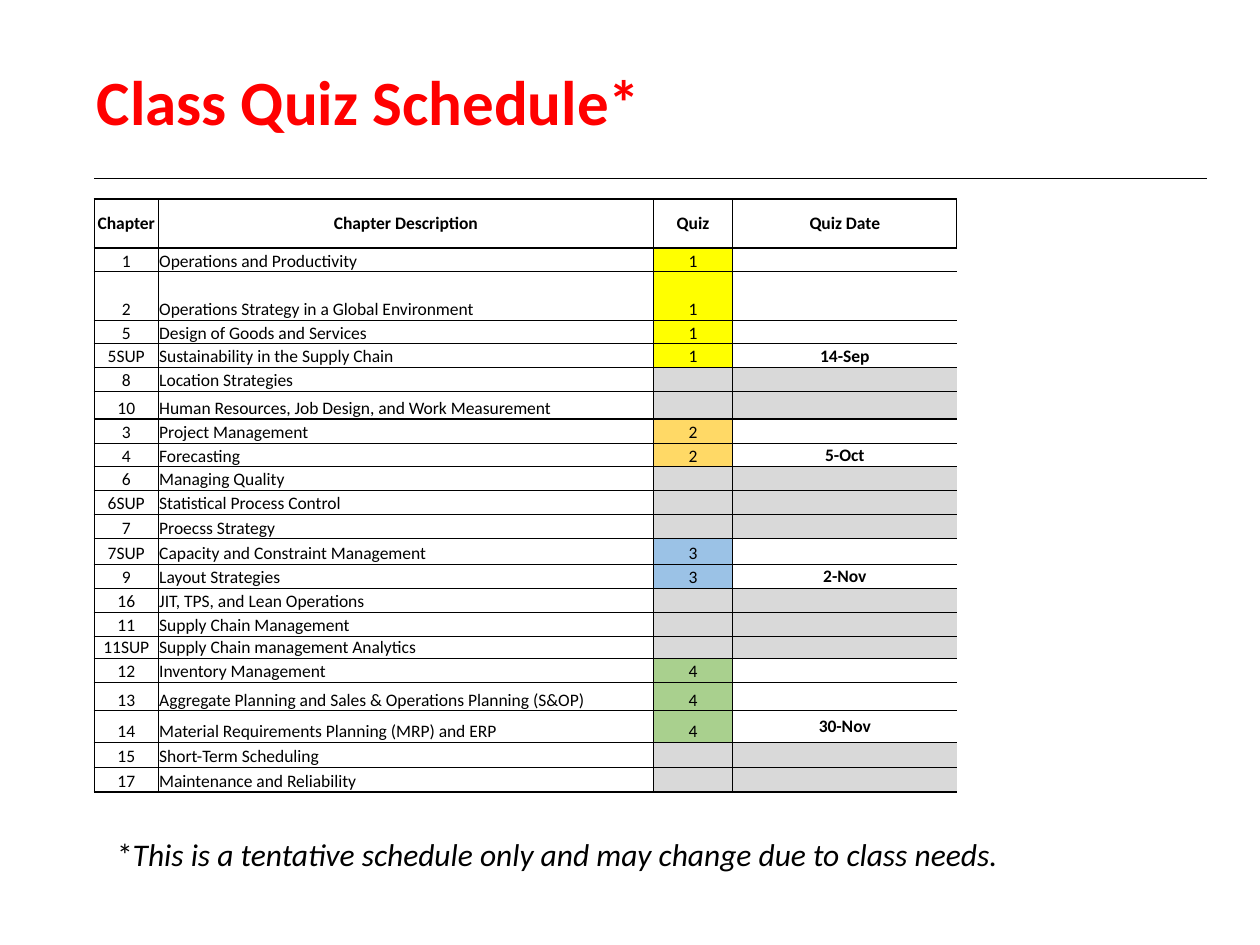
from lxml.etree import SubElement
from pptx import Presentation
from pptx.dml.color import RGBColor
from pptx.enum.shapes import MSO_CONNECTOR
from pptx.enum.text import MSO_ANCHOR as Anchor, PP_ALIGN as Align
from pptx.oxml.ns import qn
from pptx.util import Cm, Pt

FONT = "Calibri"
COLORS = {
    "title": "FF0000", "ink": "000000", "unused": "D9D9D9",
    "1": "FFFF00", "2": "FFD966", "3": "9BC2E6", "4": "A9D08E",
}
TITLE = "Class Quiz Schedule*"
NOTE = [("*", False),
        ("This is a tentative schedule only and may change due to class needs.", True)]
HEADER = ("Chapter", "Chapter Description", "Quiz", "Quiz Date")
ROW_HEIGHT = 0.48
HEADER_HEIGHT = 0.99
SPECIAL_HEIGHTS = {"2": 0.97, "10": 0.56, "7": 0.49, "7SUP": 0.52, "11SUP": 0.45,
                   "13": 0.58, "14": 0.63, "15": 0.5, "17": 0.51}
COLUMN_WIDTHS = (1.29, 9.98, 1.6, 4.52)
GROUPS = [
    [
        ("1", "Operations and Productivity", "1", ""),
        ("2", "Operations Strategy in a Global Environment", "1", ""),
        ("5", "Design of Goods and Services", "1", ""),
        ("5SUP", "Sustainability in the Supply Chain", "1", "14-Sep"),
        ("8", "Location Strategies", "", ""),
        ("10", "Human Resources, Job Design, and Work Measurement", "", ""),
    ],
    [
        ("3", "Project Management", "2", ""),
        ("4", "Forecasting", "2", "5-Oct"),
        ("6", "Managing Quality", "", ""),
        ("6SUP", "Statistical Process Control", "", ""),
        ("7", "Proecss Strategy", "", ""),
    ],
    [
        ("7SUP", "Capacity and Constraint Management", "3", ""),
        ("9", "Layout Strategies", "3", "2-Nov"),
        ("16", "JIT, TPS, and Lean Operations", "", ""),
        ("11", "Supply Chain Management", "", ""),
        ("11SUP", "Supply Chain management Analytics", "", ""),
    ],
    [
        ("12", "Inventory Management", "4", ""),
        ("13", "Aggregate Planning and Sales & Operations Planning (S&OP)", "4", ""),
        ("14", "Material Requirements Planning (MRP) and ERP", "4", "30-Nov"),
        ("15", "Short-Term Scheduling", "", ""),
        ("17", "Maintenance and Reliability", "", ""),
    ],
]


def add_span(para, text, size, color="ink", bold=False, italic=False):
    span = para.add_run()
    span.text = text
    font = span.font
    font.name, font.size, font.bold, font.italic = FONT, Pt(size), bold, italic
    font.color.rgb = RGBColor.from_string(COLORS[color])


def add_box(slide, left, top, width, height, anchor):
    box = slide.shapes.add_textbox(Cm(left), Cm(top), Cm(width), Cm(height))
    box.text_frame.word_wrap = True
    box.text_frame.vertical_anchor = anchor
    return box.text_frame.paragraphs[0]


def add_border(cell, side, points):
    line = SubElement(cell._tc.get_or_add_tcPr(), qn(f"a:ln{side}"), w=str(Pt(points)))
    if points:
        fill = SubElement(line, qn("a:solidFill"))
        SubElement(fill, qn("a:srgbClr"), val=COLORS["ink"])
    else:
        SubElement(line, qn("a:noFill"))


def fill_cell(cell, text, column, quiz, is_header, top, bottom):
    cell.margin_left = cell.margin_right = cell.margin_top = Cm(0.02)
    cell.margin_bottom = 0
    is_date = column == 3
    cell.vertical_anchor = Anchor.MIDDLE if is_header or is_date else Anchor.BOTTOM
    para = cell.text_frame.paragraphs[0]
    para.alignment = Align.LEFT if column == 1 and not is_header else Align.CENTER
    if text:
        add_span(para, text, 10, bold=is_header or is_date)
    else:
        para._p.get_or_add_endParaRPr().set("sz", "1000")

    right = 0 if is_date and not is_header else 0.5
    left = 1 if column == 0 else 0.5
    for side, points in (("L", left), ("R", right), ("T", top), ("B", bottom)):
        add_border(cell, side, points)

    color = None
    if not is_header and column >= 2:
        color = (quiz if column == 2 else None) if quiz else "unused"
    if color:
        cell.fill.solid()
        cell.fill.fore_color.rgb = RGBColor.from_string(COLORS[color])
    else:
        cell.fill.background()


def add_schedule(slide):
    rows = [(HEADER, True, True)]
    for group in GROUPS:
        last = len(group) - 1
        rows += [(row, i == 0, i == last) for i, row in enumerate(group)]
    heights = [HEADER_HEIGHT] + [SPECIAL_HEIGHTS.get(row[0], ROW_HEIGHT)
                                 for row, _, _ in rows[1:]]
    table = slide.shapes.add_table(
        len(rows), len(HEADER), Cm(1.9), Cm(4.01),
        Cm(sum(COLUMN_WIDTHS)), Cm(sum(heights))).table
    table.first_row = table.horz_banding = False
    for column, width in zip(table.columns, COLUMN_WIDTHS):
        column.width = Cm(width)
    for i, (row, starts, ends) in enumerate(rows):
        table.rows[i].height = Cm(heights[i])
        for j, text in enumerate(row):
            fill_cell(table.cell(i, j), text, j, row[2], i == 0,
                      1 if starts else 0.5, 1 if ends else 0.5)


def main():
    deck = Presentation()
    deck.slide_width, deck.slide_height = Cm(25.4), Cm(19.05)
    slide = deck.slides.add_slide(deck.slide_layouts[6])

    rule = slide.shapes.add_connector(
        MSO_CONNECTOR.STRAIGHT, Cm(1.9), Cm(3.6), Cm(24.33), Cm(3.6))
    rule.line.width = Pt(0.75)
    rule.line.color.rgb = RGBColor.from_string(COLORS["ink"])
    SubElement(rule._element.spPr, qn("a:effectLst"))

    title = add_box(slide, 1.7, 1.2, 21.59, 1.7, Anchor.BOTTOM)
    title.line_spacing = 0.8
    add_span(title, TITLE, 36, "title", bold=True)

    add_schedule(slide)

    note = add_box(slide, 2.11, 16.71, 18.42, 1.02, Anchor.TOP)
    for text, italic in NOTE:
        add_span(note, text, 18, italic=italic)

    deck.save("out.pptx")


if __name__ == "__main__":
    main()
